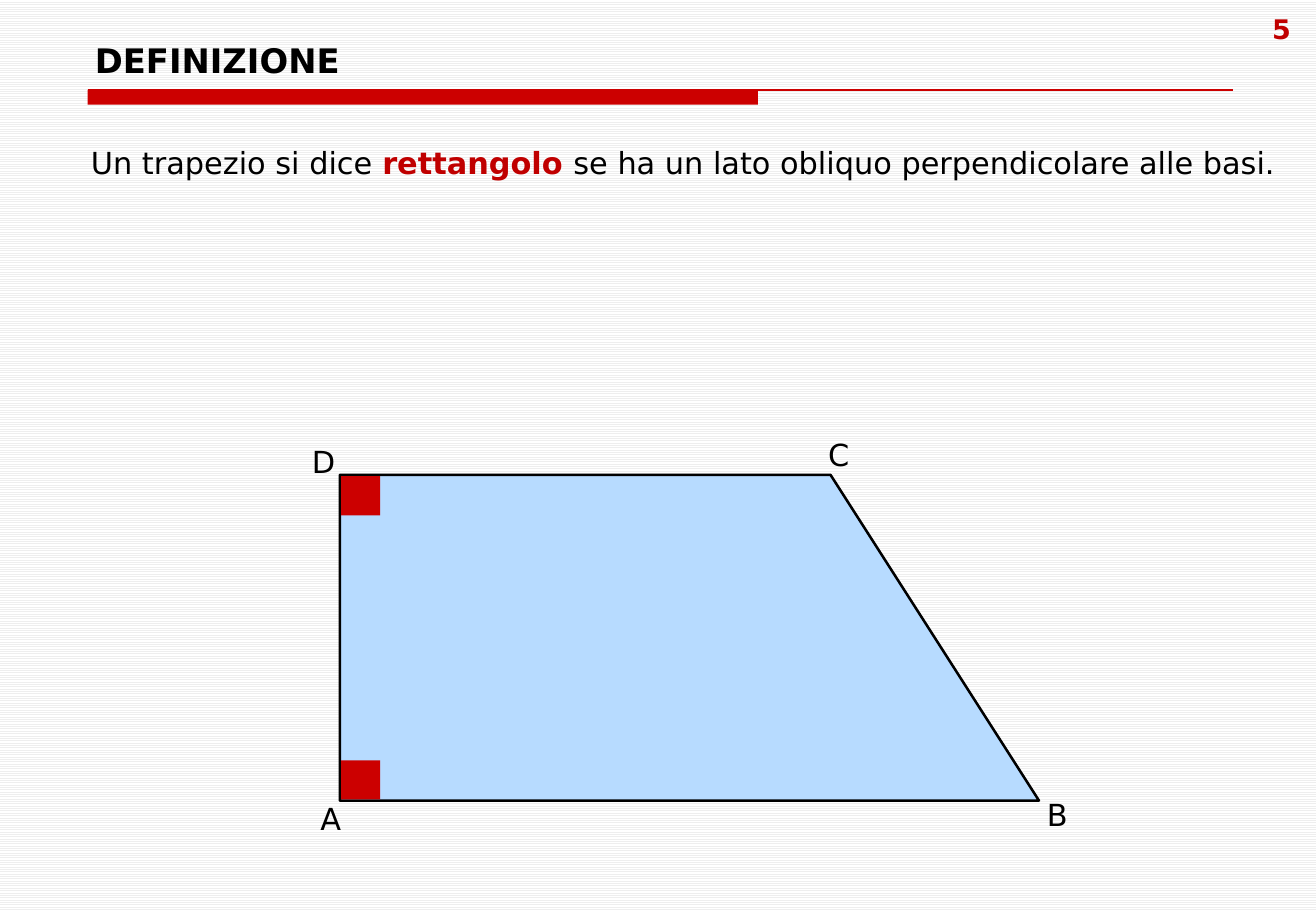
from lxml.etree import SubElement
from pptx import Presentation
from pptx.dml.color import RGBColor
from pptx.enum.dml import MSO_PATTERN
from pptx.enum.shapes import MSO_CONNECTOR, MSO_SHAPE
from pptx.enum.text import MSO_ANCHOR, MSO_AUTO_SIZE, PP_ALIGN
from pptx.oxml.ns import qn
from pptx.util import Pt

FONT = "DejaVu Sans"
COLORS = {
    "black": "000000",
    "white": "FFFFFF",
    "stripe": "EEEEEE",
    "red": "CC0000",
    "dark_red": "C00000",
    "light_blue": "B7DBFF",
}


def rgb(name):
    return RGBColor.from_string(COLORS[name])


def write(tf, size, *pieces):
    """Fill the first paragraph with runs given as (text, color, bold)."""
    p = tf.paragraphs[0]
    for text, color, bold in pieces:
        r = p.add_run()
        r.text = text
        r.font.name = FONT
        r.font.size = Pt(size)
        r.font.bold = bold
        r.font.color.rgb = rgb(color)
    return p


prs = Presentation()
prs.slide_width, prs.slide_height = Pt(780), Pt(540)
slide = prs.slides.add_slide(prs.slide_layouts[5])
shapes = slide.shapes

fill = slide.background.fill
fill.patterned()
fill.pattern = MSO_PATTERN.LIGHT_HORIZONTAL
fill.fore_color.rgb = rgb("stripe")
fill.back_color.rgb = rgb("white")

# Title and page number
title = shapes.title
title.left, title.top, title.width, title.height = Pt(49), Pt(23.8), Pt(682.5), Pt(27.4)
tf = title.text_frame
tf.auto_size = MSO_AUTO_SIZE.NONE
tf.vertical_anchor = MSO_ANCHOR.BOTTOM
write(tf, 20, ("DEFINIZIONE", "black", True)).alignment = PP_ALIGN.LEFT

number = shapes.add_textbox(Pt(733), Pt(3.6), Pt(53.3), Pt(37.4))
number.text_frame.word_wrap = True
write(number.text_frame, 16, ("5", "dark_red", True)).alignment = PP_ALIGN.CENTER

# Rule under the title
rule = shapes.add_connector(MSO_CONNECTOR.STRAIGHT, Pt(52), Pt(53.3), Pt(731), Pt(53.3))
rule.line.color.rgb = rgb("red")
rule.line.width = Pt(0.75)
SubElement(rule._element.spPr, qn("a:effectLst"))

# Definition
definition = shapes.add_textbox(Pt(46.8), Pt(82.1), Pt(733), Pt(29))
definition.text_frame.word_wrap = True
write(
    definition.text_frame,
    18,
    ("Un trapezio si dice ", "black", False),
    ("rettangolo ", "dark_red", True),
    ("se ha un lato obliquo perpendicolare alle basi.", "black", False),
)

# Vertex labels
for letter, left, top in [
    ("A", 182.9, 470.9),
    ("B", 613.4, 468.4),
    ("C", 483.8, 254.9),
    ("D", 177.8, 259.2),
]:
    label = shapes.add_textbox(Pt(left), Pt(top), Pt(27.5), Pt(29))
    label.text_frame.word_wrap = False
    write(label.text_frame, 18, (letter, "black", False))

# Right trapezoid
A, B, C, D = (201.4, 474.5), (615.8, 474.5), (492.3, 281.5), (201.4, 281.5)
builder = shapes.build_freeform(Pt(A[0]), Pt(A[1]))
builder.add_line_segments([(Pt(x), Pt(y)) for x, y in (B, C, D)], close=True)
trapezoid = builder.convert_to_shape()
trapezoid.shadow.inherit = False
trapezoid.fill.solid()
trapezoid.fill.fore_color.rgb = rgb("light_blue")
trapezoid.line.color.rgb = rgb("black")
trapezoid.line.width = Pt(1.5)

# Title bar and right-angle marks
MARK = 23.2
for left, top, width, height in [
    (52, 53.3, 397.3, 8.7),
    (A[0] + 0.8, A[1] - MARK - 0.6, MARK, MARK),
    (D[0] + 0.8, D[1] + 0.8, MARK, MARK),
]:
    sp = shapes.add_shape(MSO_SHAPE.RECTANGLE, Pt(left), Pt(top), Pt(width), Pt(height))
    sp.shadow.inherit = False
    sp.fill.solid()
    sp.fill.fore_color.rgb = rgb("red")
    sp.line.fill.background()

prs.save("out.pptx")
